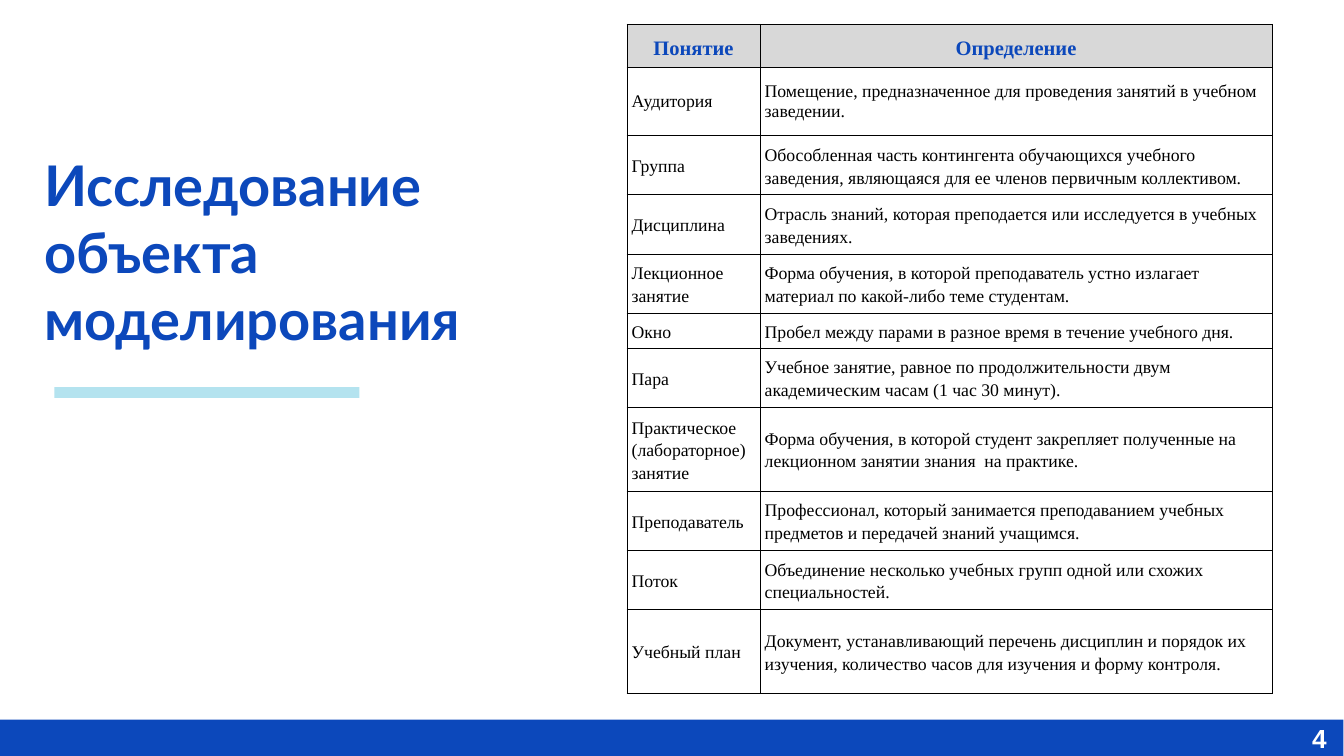
from lxml import etree
from pptx import Presentation
from pptx.dml.color import RGBColor
from pptx.enum.shapes import MSO_SHAPE as Shape
from pptx.enum.text import MSO_ANCHOR as Anchor, MSO_AUTO_SIZE as AutoSize, PP_ALIGN as Align
from pptx.oxml.ns import qn
from pptx.util import Inches, Pt

BLUE, PALE_BLUE, GREY, BLACK, WHITE = "0C48BB", "B4E3EF", "D8D8D8", "000000", "FFFFFF"

HEADER = ("Понятие", "Определение")
# term, definition, row height in inches
CONCEPTS = [
    ("Аудитория", "Помещение, предназначенное для проведения занятий в учебном заведении.", 1.02),
    ("Группа", "Обособленная часть контингента обучающихся учебного заведения, "
     "являющаяся для ее членов первичным коллективом.", 0.88),
    ("Дисциплина", "Отрасль знаний, которая преподается или исследуется в учебных заведениях.", 0.88),
    ("Лекционное занятие", "Форма обучения, в которой преподаватель устно излагает материал "
     "по какой-либо теме студентам.", 0.88),
    ("Окно", "Пробел между парами в разное время в течение учебного дня.", 0.52),
    ("Пара", "Учебное занятие, равное по продолжительности двум академическим часам "
     "(1 час 30 минут).", 0.88),
    ("Практическое (лабораторное) занятие", "Форма обучения, в которой студент закрепляет "
     "полученные на лекционном занятии знания  на практике.", 1.25),
    ("Преподаватель", "Профессионал, который занимается преподаванием учебных предметов "
     "и передачей знаний учащимся.", 0.88),
    ("Поток", "Объединение несколько учебных групп одной или схожих специальностей.", 0.88),
    ("Учебный план", "Документ, устанавливающий перечень дисциплин и порядок их изучения, "
     "количество часов для изучения и форму контроля.", 1.25),
]


def color(hex_value):
    return RGBColor.from_string(hex_value)


def style(paragraph, font_name, size, hex_value, bold=False, align=Align.LEFT, spacing=1.0):
    font = paragraph.font
    font.name, font.size, font.bold = font_name, Pt(size), bold
    font.color.rgb = color(hex_value)
    paragraph.alignment = align
    paragraph.line_spacing = spacing


def set_margins(target, inset):
    target.margin_left = target.margin_right = Inches(inset)
    target.margin_top = target.margin_bottom = Inches(inset)


def add_bar(slide, left, top, width, height, hex_value):
    bar = slide.shapes.add_shape(Shape.RECTANGLE, Inches(left), Inches(top),
                                 Inches(width), Inches(height))
    bar.shadow.inherit = False
    bar.fill.solid()
    bar.fill.fore_color.rgb = color(hex_value)
    bar.line.fill.background()


def add_heading(slide, left, top, width, height):
    title = slide.shapes.title
    title.left, title.top = Inches(left), Inches(top)
    title.width, title.height = Inches(width), Inches(height)
    frame = title.text_frame
    frame.text = "Исследование объекта моделирования"
    frame.word_wrap = True
    frame.auto_size = AutoSize.NONE
    frame.vertical_anchor = Anchor.TOP
    set_margins(frame, 0)
    style(frame.paragraphs[0], "Lato", 60, BLUE, bold=True)
    # Accent under the heading
    add_bar(slide, left + 0.15, top + height + 0.49, 4.54, 0.16, PALE_BLUE)


def add_footer(slide, left, top, width, height):
    add_bar(slide, left, top, width, height, BLUE)
    # Page number at the right end
    page_width = 1.32
    page = slide.shapes.add_textbox(Inches(left + width - page_width - 0.07), Inches(top),
                                    Inches(page_width), Inches(height))
    frame = page.text_frame
    frame.text = "4"
    frame.word_wrap = True
    frame.vertical_anchor = Anchor.MIDDLE
    set_margins(frame, 0.18)
    style(frame.paragraphs[0], "Arial", 28, WHITE, bold=True, align=Align.RIGHT)


def add_borders(cell):
    properties = cell._tc.get_or_add_tcPr()
    for side in ("lnL", "lnR", "lnT", "lnB"):
        border = etree.SubElement(properties, qn(f"a:{side}"), w=str(Pt(1)))
        fill = etree.SubElement(border, qn("a:solidFill"))
        etree.SubElement(fill, qn("a:srgbClr"), val=BLACK)


def fill_cell(cell, text, background=None, **text_style):
    add_borders(cell)
    if background:
        cell.fill.solid()
        cell.fill.fore_color.rgb = color(background)
    else:
        cell.fill.background()
    cell.text = text
    cell.vertical_anchor = Anchor.MIDDLE
    set_margins(cell, 0.07)
    style(cell.text_frame.paragraphs[0], "Times New Roman", **text_style)


def add_glossary(slide, left, top, width, height):
    table = slide.shapes.add_table(len(CONCEPTS) + 1, len(HEADER), Inches(left), Inches(top),
                                   Inches(width), Inches(height)).table
    table.first_row = table.horz_banding = False
    term_width = 1.98
    table.columns[0].width = Inches(term_width)
    table.columns[1].width = Inches(width - term_width)

    # Header row
    table.rows[0].height = Inches(0.64)
    for column, label in enumerate(HEADER):
        fill_cell(table.cell(0, column), label, GREY, size=22, hex_value=BLUE, bold=True,
                  align=Align.CENTER, spacing=1.25)

    # Concept rows; the first one is set tighter
    for row, (term, definition, row_height) in enumerate(CONCEPTS, start=1):
        table.rows[row].height = Inches(row_height)
        for column, text in enumerate((term, definition)):
            fill_cell(table.cell(row, column), text, size=19, hex_value=BLACK,
                      spacing=1.0 if row == 1 else 1.15)


def main():
    presentation = Presentation()
    presentation.slide_width, presentation.slide_height = Inches(20), Inches(11.25)
    slide = presentation.slides.add_slide(presentation.slide_layouts[5])
    add_heading(slide, 0.66, 2.24, 8.16, 3.03)
    add_footer(slide, 0, 10.71, 19.99, 0.54)
    add_glossary(slide, 9.33, 0.36, 9.6, 9.99)
    presentation.save("out.pptx")


if __name__ == "__main__":
    main()
